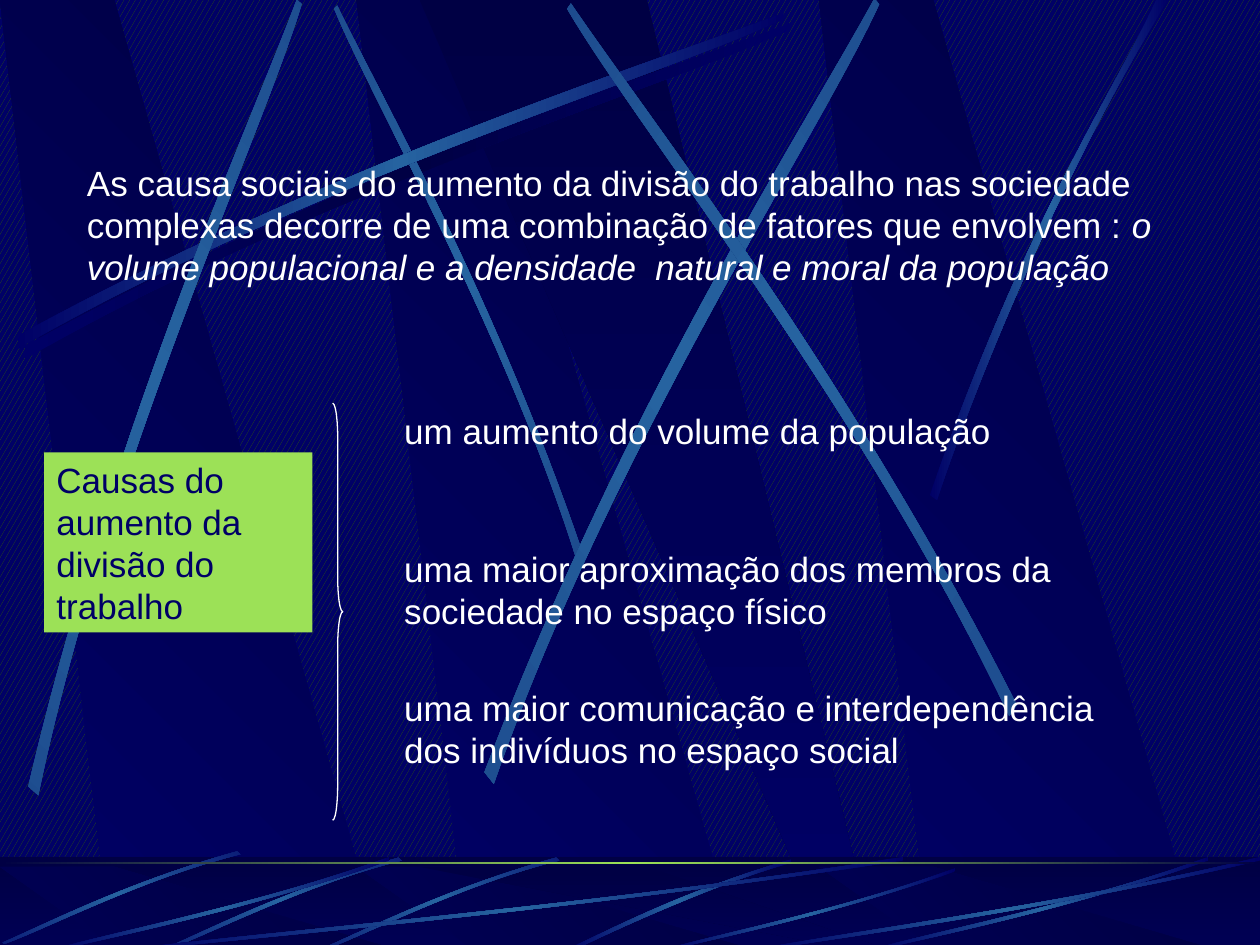
import pptx
import pptx.dml.color
import pptx.enum.dml
import pptx.enum.shapes
import pptx.enum.text
import pptx.oxml
import pptx.oxml.ns
import pptx.util
from lxml import etree

WIDE, HIGH = 10, 7.5
NAVY, DARK, BLUE, SOFT = "000066", "000044", "2663A0", "1A4488"
LIME, WHITE = "9CE157", "FFFFFF"
RECT = pptx.enum.shapes.MSO_SHAPE.RECTANGLE
qn = pptx.oxml.ns.qn

# Outlines as shares of their box; a beam is two cubic edges of four points.
SLAB = [(0.29, 1), (1, 1), (0.3, 0), (0, 0)]
WEDGE = [(0, 0), (0.9, 1), (1, 1), (0.5, 0)]
BEAM = [(0, 0.96), (0.43, 0.43), (0.83, 0.15), (1, 0),
        (1, 0.02), (0.84, 0.19), (0.38, 0.5), (0, 1)]
STEEP = [(0, 0.99), (0.4, 0.44), (0.79, 0.17), (0.95, 0),
         (1, 0), (0.52, 0.37), (0.16, 0.81), (0.03, 1)]
SPRAY = [(1, 0), (0.49, 0.37), (0.16, 0.82), (0, 0.99),
         (0.03, 1), (0.23, 0.76), (0.68, 0.25), (1, 0.04)]


def rgb(code):
    return pptx.dml.color.RGBColor.from_string(code)


def inch(*sizes):
    return [pptx.util.Inches(size) for size in sizes]


def shade(shape, codes, angle=0):
    """Fill with evenly spaced colours along a clockwise angle."""
    shape.fill.gradient()
    shape.fill.gradient_angle = (360 - angle) % 360
    stops = shape.element.spPr.find(qn("a:gradFill")).find(qn("a:gsLst"))
    for stop in list(stops):
        stops.remove(stop)
    for n, code in enumerate(codes):
        pos = str(n * 100000 // (len(codes) - 1))
        stop = etree.SubElement(stops, qn("a:gs"), pos=pos)
        etree.SubElement(stop, qn("a:srgbClr"), val=code)


def plain(shape):
    shape.shadow.inherit = False
    shape.line.fill.background()
    return shape


def block(slide, box):
    return plain(slide.shapes.add_shape(RECT, *inch(*box)))


def shard(slide, marks, box):
    """Draw a closed outline, given in shares of its box."""
    left, top, wide, high = box
    mils = [(round(1000 * (left + x * wide)), round(1000 * (top + y * high)))
            for x, y in marks]
    pen = slide.shapes.build_freeform(*mils[0], scale=914.4)
    pen.add_line_segments(mils[1:], close=True)
    return plain(pen.convert_to_shape())


def bend(shape):
    """Join the lines of a beam, three by three, into cubic edges."""
    lines = list(shape.element.spPr.iter(qn("a:lnTo")))
    for group in (lines[:3], lines[4:]):
        edge = etree.Element(qn("a:cubicBezTo"))
        group[0].addprevious(edge)
        for line in group:
            edge.append(line[0])
            line.getparent().remove(line)


def beam(slide, box, turn=0, flips="", form=BEAM, codes=(NAVY, BLUE, NAVY)):
    form = [(1 - x if "h" in flips else x, 1 - y if "v" in flips else y)
            for x, y in form]
    shape = shard(slide, form, box)
    bend(shape)
    shape.rotation = turn
    shade(shape, codes)


def panels(slide, top, high):
    for left in (2.83, 0, 6.5):
        shade(shard(slide, SLAB, (left, top, 3.02, high)), (NAVY, DARK), 315)
    shade(shard(slide, WEDGE, (3.33, top, 3.61, high)), (DARK, NAVY), 90)


def rays(slide):
    beam(slide, (0.2, 0.18, 6.08, 2.67), codes=(NAVY, DARK, NAVY))
    glow = (SOFT, BLUE, SOFT)
    beam(slide, (1.41, 1.35, 4.42, 1.75), 45, "h", codes=glow)
    beam(slide, (0.14, 0.1, 6.08, 2.67))
    beam(slide, (-1.71, 1.82, 6.08, 2.67), 311.7, codes=glow)
    beam(slide, (2.31, 1.6, 6.24, 3.01), 321.6, codes=glow)
    beam(slide, (3.23, 1.52, 6.08, 2.67), 34.7, "h", codes=glow)
    beam(slide, (7.38, 0, 1.89, 3.97), form=STEEP)


def floor(slide):
    base = (0, 6.8, WIDE, HIGH - 6.8)
    shade(block(slide, base), (DARK, NAVY), 90)
    panels(slide, 6.88, HIGH - 6.88)
    veil = block(slide, base)
    veil.fill.solid()
    veil.fill.fore_color.rgb = rgb(DARK)
    tint = next(veil.element.spPr.iter(qn("a:srgbClr")))
    etree.SubElement(tint, qn("a:alpha"), val="50000")
    beam(slide, (4.48, 6.82, 1.8, 0.73), form=SPRAY)
    for left, top in ((2.58, 6.76), (1.33, 6.76), (0.05, 6.71)):
        beam(slide, (left, top, 1.83, 0.84), 315, "h")
    for left, top, wide in ((1, 6.8, 6.17), (0.42, 6.8, 2.67), (5.27, 6.89, 2.31),
                            (6.92, 6.8, 2.67), (6, 6.8, 4)):
        beam(slide, (left, top, wide, 7.55 - top), flips="hv")
    shade(block(slide, (0, 6.84, WIDE, 0.02)), (DARK, LIME, DARK))


def settle(slide, master):
    """Move the drawn scenery to the master, behind its placeholders."""
    tree = master.shapes.element
    scene = [shape for shape in slide.shapes if not shape.is_placeholder]
    for n, shape in enumerate(scene):
        next(shape.element.iter(qn("p:cNvPr"))).set("id", str(100 + n))
        tree.insert(2 + n, shape.element)


def write(shape, *runs, code=WHITE):
    """Fill a shape with one paragraph of (text, italic) runs."""
    frame = shape.text_frame
    frame.word_wrap = True
    frame.auto_size = pptx.enum.text.MSO_AUTO_SIZE.NONE
    frame.vertical_anchor = pptx.enum.text.MSO_ANCHOR.TOP
    para = frame.paragraphs[0]
    para.alignment = pptx.enum.text.PP_ALIGN.LEFT
    para.line_spacing = pptx.util.Pt(24)
    para.space_before = pptx.util.Pt(0)
    for text, slant in runs:
        run = para.add_run()
        run.text = text
        run.font.name = "Arial"
        run.font.size = pptx.util.Pt(20)
        run.font.italic = slant
        run.font.color.rgb = rgb(code)


def lead(slide):
    title = slide.shapes.title
    title.left, title.top, title.width, title.height = inch(0.59, 1.23, 8.82, 1.1)
    write(title,
          ("As causa sociais do aumento da divisão do trabalho nas sociedade "
           "complexas decorre de uma combinação de fatores que envolvem : ", False),
          ("o volume populacional e a densidade  natural e moral da população", True))


def label(slide):
    shape = block(slide, (0.35, 3.59, 2.13, 1.43))
    shape.fill.solid()
    shape.fill.fore_color.rgb = rgb(LIME)
    write(shape, ("Causas do aumento da  divisão do trabalho", False), code=NAVY)


def causes(slide):
    items = (("um aumento do volume da população", 6.14, 0.43),
             ("uma maior aproximação dos membros da sociedade no espaço físico",
              5.91, 0.77),
             ("uma maior comunicação e interdependência dos indivíduos "
              "no espaço social", 6.06, 0.77))
    for row, (text, wide, high) in enumerate(items):
        box = inch(3.11, 3.2 + 1.1 * row, wide, high)
        write(slide.shapes.add_textbox(*box), (text, False))


def brace(slide):
    kind = pptx.enum.shapes.MSO_SHAPE.RIGHT_BRACE
    shape = slide.shapes.add_shape(kind, *inch(2.64, 3.2, 0.08, 3.31))
    shape.shadow.inherit = False
    shape.adjustments[0], shape.adjustments[1] = 3.45, 0.5
    shape.fill.background()
    shape.line.color.rgb = rgb(WHITE)
    shape.line.width = pptx.util.Pt(0.75)


def main():
    deck = pptx.Presentation()
    deck.slide_width, deck.slide_height = inch(WIDE, HIGH)
    slide = deck.slides.add_slide(deck.slide_layouts[5])
    back = slide.background.fill
    back.patterned()
    back.pattern = pptx.enum.dml.MSO_PATTERN.LARGE_CONFETTI
    back.fore_color.rgb, back.back_color.rgb = rgb("2D5513"), rgb(NAVY)
    panels(slide, 0, HIGH)
    rays(slide)
    floor(slide)
    settle(slide, deck.slide_master)
    lead(slide)
    label(slide)
    causes(slide)
    brace(slide)
    deck.save("out.pptx")


if __name__ == "__main__":
    main()
